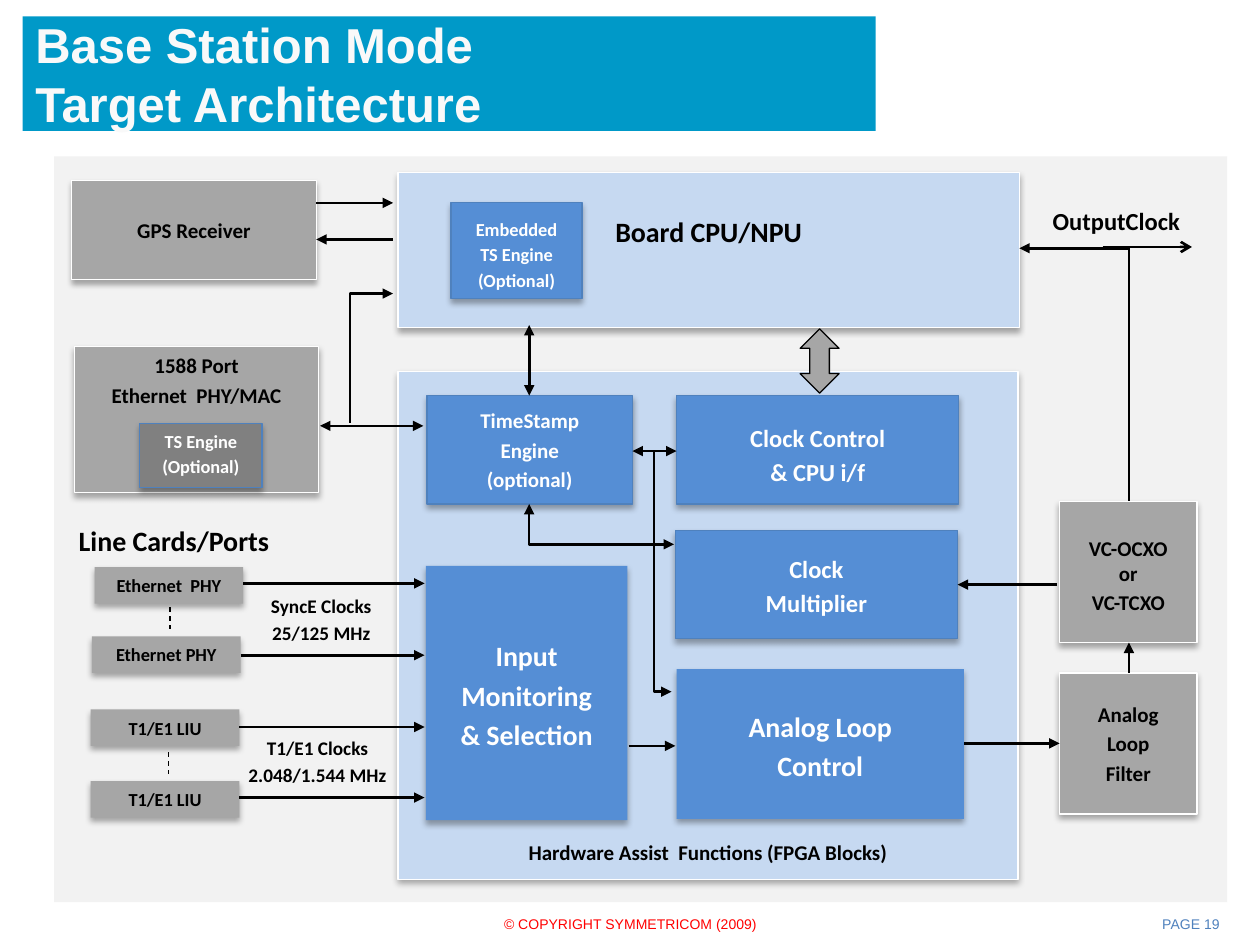
from lxml import etree
from pptx import Presentation
from pptx import util as u
from pptx.dml.color import RGBColor
from pptx.enum import dml, shapes, text
from pptx.oxml import ns

BLACK = RGBColor(0x00, 0x00, 0x00)
WHITE = RGBColor(0xFF, 0xFF, 0xFF)
TITLE_INK = RGBColor(0xF9, 0xF9, 0xF9)
TITLE_BAND = RGBColor(0x00, 0x99, 0xC8)
BACKDROP = RGBColor(0xF2, 0xF2, 0xF2)
PALE_BLUE = RGBColor(0xC6, 0xD9, 0xF1)
BLUE = RGBColor(0x55, 0x8E, 0xD5)
EDGE_BLUE = RGBColor(0x4F, 0x81, 0xBD)
GRAY = RGBColor(0xA6, 0xA6, 0xA6)
DARK_GRAY = RGBColor(0x80, 0x80, 0x80)
RED = RGBColor(0xFF, 0x00, 0x00)

ALIGN = text.PP_ALIGN
ANCHOR = text.MSO_ANCHOR


def write(frame, lines, size=12, color=BLACK, font="Calibri", bold=True,
          align=ALIGN.CENTER, anchor=ANCHOR.MIDDLE, top=0.05, bottom=0.05, side=0.1):
    frame.word_wrap = True
    frame.auto_size = text.MSO_AUTO_SIZE.NONE
    frame.vertical_anchor = anchor
    frame.margin_top, frame.margin_bottom = u.Inches(top), u.Inches(bottom)
    frame.margin_left = frame.margin_right = u.Inches(side)
    for index, line in enumerate(lines):
        paragraph = frame.add_paragraph() if index else frame.paragraphs[0]
        paragraph.text = line
        paragraph.alignment = align
        paragraph.space_before = u.Pt(round(size * 0.2, 1) if index else 0)
        for run in paragraph.runs:
            run.font.name, run.font.size = font, u.Pt(size)
            run.font.bold, run.font.color.rgb = bold, color


def cast_shadow(block):
    effects = block._element.spPr.find(ns.qn("a:effectLst"))
    shadow = etree.SubElement(
        effects, ns.qn("a:outerShdw"), blurRad=str(u.Pt(3.5)), dist=str(u.Pt(2.2)),
        dir="5400000", algn="ctr", rotWithShape="0")
    tint = etree.SubElement(shadow, ns.qn("a:srgbClr"), val=str(BLACK))
    etree.SubElement(tint, ns.qn("a:alpha"), val="32000")


def add_block(slide, place, fill, lines=(), edge=None, shadow=True,
              preset=shapes.MSO_SHAPE.RECTANGLE, **style):
    block = slide.shapes.add_shape(preset, *map(u.Inches, place))
    block.fill.solid()
    block.fill.fore_color.rgb = fill
    if edge is None:
        block.line.fill.background()
    else:
        block.line.color.rgb = edge
        block.line.width = u.Pt(0.75)
    block.shadow.inherit = False
    if shadow:
        cast_shadow(block)
    if lines:
        write(block.text_frame, lines, **style)


def add_label(slide, place, lines, **style):
    label = slide.shapes.add_textbox(*map(u.Inches, place))
    write(label.text_frame, lines, **style)


def add_wire(slide, start, end, head=None, tail=None, elbow=False, dashed=False):
    kind = shapes.MSO_CONNECTOR.ELBOW if elbow else shapes.MSO_CONNECTOR.STRAIGHT
    wire = slide.shapes.add_connector(kind, *map(u.Inches, (*start, *end)))
    properties = wire._element.spPr
    if elbow:
        properties.find(ns.qn("a:prstGeom")).set("prst", "bentConnector2")
    wire.line.color.rgb = BLACK
    wire.line.width = u.Pt(0.75 if dashed else 1.5)
    if dashed:
        wire.line.dash_style = dml.MSO_LINE.DASH
    outline = properties.find(ns.qn("a:ln"))
    for tag, tip in (("a:headEnd", head), ("a:tailEnd", tail)):
        if tip:
            etree.SubElement(outline, ns.qn(tag), type=tip)
    etree.SubElement(properties, ns.qn("a:effectLst"))


def add_title(slide):
    title = slide.shapes.title
    title.left, title.top = u.Inches(0.18), u.Inches(0.13)
    title.width, title.height = u.Inches(6.77), u.Inches(0.91)
    title.fill.solid()
    title.fill.fore_color.rgb = TITLE_BAND
    write(title.text_frame, ["Base Station Mode\vTarget Architecture"], size=28,
          color=TITLE_INK, font="Arial", align=ALIGN.LEFT)


def add_boards(slide):
    add_block(slide, (0.43, 1.24, 9.31, 5.92), BACKDROP, shadow=False)
    add_block(slide, (3.16, 1.37, 4.93, 1.23), PALE_BLUE, ["Board CPU/NPU"],
              edge=WHITE, size=16, bottom=0.34)
    add_block(slide, (3.16, 2.95, 4.92, 4.03), PALE_BLUE,
              ["Hardware Assist  Functions (FPGA Blocks)"], edge=WHITE,
              anchor=ANCHOR.BOTTOM, bottom=0.12)


def add_function_blocks(slide):
    for place, lines, size, edge, top in (
        ((3.38, 4.49, 1.6, 2.02), ["Input", "Monitoring", "& Selection"], 16, None, 0.08),
        ((5.37, 5.31, 2.28, 1.19), ["Analog Loop", "Control"], 16, None, 0.08),
        ((3.39, 3.14, 1.63, 0.86), ["TimeStamp", "Engine", "(optional)"], 12, EDGE_BLUE, 0.05),
        ((5.37, 3.14, 2.24, 0.86), ["Clock Control", "& CPU i/f"], 14, EDGE_BLUE, 0.13),
        ((5.36, 4.21, 2.24, 0.86), ["Clock", "Multiplier"], 14, EDGE_BLUE, 0.07),
        ((3.58, 1.61, 1.04, 0.76), ["Embedded", "TS Engine", "(Optional)"], 10.5,
         EDGE_BLUE, 0.11),
    ):
        add_block(slide, place, BLUE, lines, edge=edge, size=size, color=WHITE, top=top)


def add_outer_blocks(slide):
    add_block(slide, (0.57, 1.43, 1.94, 0.79), GRAY, ["GPS Receiver"], edge=WHITE)
    add_block(slide, (0.59, 2.75, 1.94, 1.16), GRAY, ["1588 Port", "Ethernet  PHY/MAC"],
              edge=WHITE, anchor=ANCHOR.TOP)
    add_block(slide, (1.11, 3.36, 0.97, 0.51), DARK_GRAY, ["TS Engine", "(Optional)"],
              edge=EDGE_BLUE, size=10.5, color=WHITE, bottom=0.08)
    add_block(slide, (8.41, 3.98, 1.09, 1.12), GRAY, ["VC-OCXO\vor", "VC-TCXO"],
              edge=WHITE, top=0.1)
    add_block(slide, (8.41, 5.34, 1.09, 1.12), GRAY, ["Analog", "Loop", "Filter"], edge=WHITE)


def add_line_cards(slide):
    add_label(slide, (0.37, 4.1, 2.02, 0.37), ["Line Cards/Ports"], size=16)
    for left, top, name, wire_y in (
        (0.75, 4.5, "Ethernet  PHY", 4.63),
        (0.73, 5.05, "Ethernet PHY", 5.2),
        (0.72, 5.63, "T1/E1 LIU", 5.77),
        (0.72, 6.2, "T1/E1 LIU", 6.33),
    ):
        add_block(slide, (left, top, 1.18, 0.29), GRAY, [name], size=10.5)
        add_wire(slide, (left + 1.18, wire_y), (3.37, wire_y), tail="triangle")
    for x, top in ((1.35, 4.82), (1.34, 5.97)):
        add_wire(slide, (x, top), (x, top + 0.17), dashed=True)
    add_label(slide, (1.98, 4.66, 1.14, 0.51), ["SyncE Clocks", "25/125 MHz"], size=11)
    add_label(slide, (1.86, 5.79, 1.32, 0.51), ["T1/E1 Clocks", "2.048/1.544 MHz"],
              size=11, side=0.05)


def add_signals(slide):
    add_block(slide, (6.35, 2.61, 0.31, 0.51), GRAY, edge=BLACK, shadow=False,
              preset=shapes.MSO_SHAPE.UP_DOWN_ARROW)
    for start, end in (
        ((2.51, 1.61), (3.12, 1.61)),
        ((3.12, 1.9), (2.51, 1.9)),
        ((4.99, 5.92), (5.36, 5.92)),
        ((7.65, 5.9), (8.41, 5.9)),
        ((8.96, 5.34), (8.96, 5.1)),
        ((8.39, 4.64), (7.6, 4.64)),
    ):
        add_wire(slide, start, end, tail="triangle")
    for start, end in (
        ((5.02, 3.58), (5.37, 3.58)),
        ((2.54, 3.38), (3.36, 3.38)),
        ((4.2, 2.58), (4.2, 3.14)),
    ):
        add_wire(slide, start, end, head="triangle", tail="triangle")
    for start, end, tail in (
        ((3.12, 2.33), (2.78, 3.36), None),
        ((5.35, 4.32), (4.2, 4), "triangle"),
        ((5.33, 5.49), (5.19, 3.58), None),
        ((8.09, 1.97), (8.96, 3.98), None),
    ):
        add_wire(slide, start, end, head="triangle", tail=tail, elbow=True)
    add_wire(slide, (8.75, 1.96), (9.46, 1.96), tail="arrow")
    add_label(slide, (8.05, 1.58, 1.62, 0.34), ["OutputClock"], size=14)


def add_footer(slide):
    add_label(slide, (3.42, 7.22, 3.17, 0.23), ["© COPYRIGHT SYMMETRICOM (2009)"],
              size=8, color=RED, font="Arial", bold=False)
    add_label(slide, (7.45, 7.22, 2.33, 0.23), ["PAGE 19"], size=8, color=EDGE_BLUE,
              font="Arial", bold=False, align=ALIGN.RIGHT)


def main():
    deck = Presentation()
    deck.slide_width, deck.slide_height = u.Inches(10), u.Inches(7.5)
    slide = deck.slides.add_slide(deck.slide_layouts[5])
    for add_part in (add_title, add_boards, add_function_blocks, add_outer_blocks,
                     add_line_cards, add_signals, add_footer):
        add_part(slide)
    deck.save("out.pptx")


if __name__ == "__main__":
    main()
